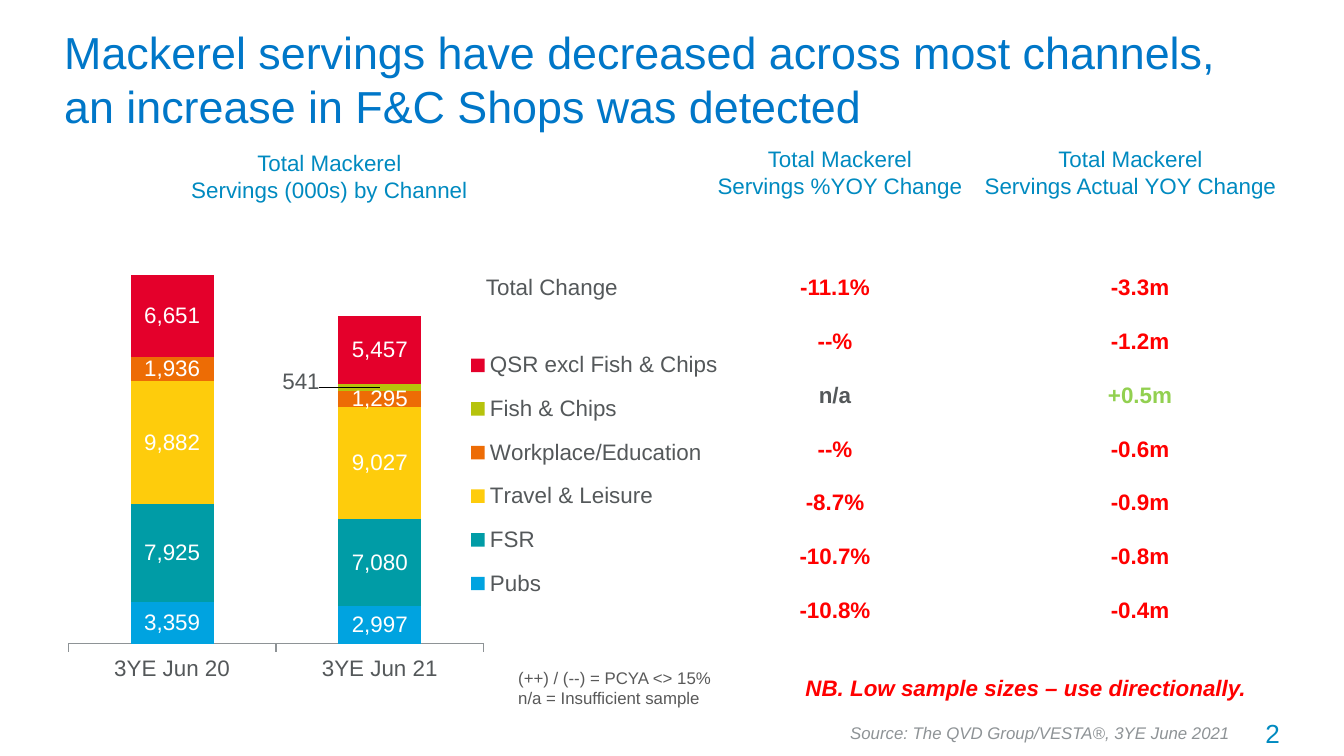
from dataclasses import dataclass

from pptx import Presentation
from pptx import util as u
from pptx.chart import data as cd
from pptx.dml.color import RGBColor
from pptx.enum import chart as ce, text as te
from pptx.oxml import parse_xml
from pptx.oxml.ns import nsdecls

CENTER, RIGHT = te.PP_ALIGN.CENTER, te.PP_ALIGN.RIGHT


@dataclass(frozen=True)
class Theme:
    font: str = "Arial"
    title: str = "0077C8"
    head: str = "008AC0"
    body: str = "54585A"
    note: str = "595959"
    source: str = "8E9396"
    down: str = "FF0000"
    up: str = "92D050"
    white: str = "FFFFFF"
    big: int = 24
    page: int = 14
    base: int = 12
    small: int = 9


T = Theme()

CATS = ["3YE Jun 20", "3YE Jun 21"]
SERIES = [
    ("Pubs", (3359, 2997), "00A3E0"),
    ("FSR", (7925, 7080), "009CA6"),
    ("Travel & Leisure", (9882, 9027), "FECC0C"),
    ("Workplace/Education", (1936, 1295), "ED6C05"),
    ("Fish & Chips", (0, 541), "B6C30C"),
    ("QSR excl Fish & Chips", (6651, 5457), "E4002B"),
]
RATES = ["-11.1%", "--%", "n/a", "--%", "-8.7%", "-10.7%", "-10.8%"]
DIFFS = ["-3.3m", "-1.2m", "+0.5m", "-0.6m", "-0.9m", "-0.8m", "-0.4m"]


def px(n):
    return u.Emu(round(n * 914400 / 134.4))


def rgb(code):
    return RGBColor.from_string(code)


def style(font, size, color, bold=False, italic=False):
    font.name, font.size = T.font, u.Pt(size)
    font.color.rgb = rgb(color)
    font.bold, font.italic = bold, italic


def put(slide, box, words, size, color, align=None, wrap=True, gap=0, **look):
    """Add a text box with one paragraph per line of words."""
    frame = slide.shapes.add_textbox(*map(px, box)).text_frame
    frame.word_wrap = wrap
    frame.text = words
    for para in frame.paragraphs:
        para.alignment = align
        para.space_after = u.Pt(gap)
        for run in para.runs:
            style(run.font, size, color, **look)
    return frame


def layout(x, y, w=None, h=None, inner=False):
    """Build a manual layout in fractions of the chart."""
    parts = ['<c:layoutTarget val="inner"/>'] if inner else []
    if w is not None:
        parts += ['<c:xMode val="edge"/>', '<c:yMode val="edge"/>']
    sizes = {"x": x, "y": y, "w": w, "h": h}
    parts += [f'<c:{k} val="{v}"/>' for k, v in sizes.items() if v is not None]
    return parse_xml(f'<c:layout {nsdecls("c")}><c:manualLayout>'
                     f'{"".join(parts)}</c:manualLayout></c:layout>')


def title(slide, box):
    frame = put(slide, box, "Mackerel servings have decreased across most channels, "
                "an increase in F&C Shops was detected", T.big, T.title)
    frame.vertical_anchor = te.MSO_ANCHOR.MIDDLE


def head(slide, box, words):
    put(slide, box, "Total Mackerel\n" + words, T.base, T.head, CENTER, wrap=False)


def label(series, color):
    labels = series.data_labels
    labels.show_value = True
    labels.number_format, labels.number_format_is_linked = "#,##0", False
    style(labels.font, T.base, color)


def stack(slide, box):
    data = cd.CategoryChartData()
    data.categories = CATS
    for name, vals, _ in SERIES:
        data.add_series(name, vals)
    chart = slide.shapes.add_chart(
        ce.XL_CHART_TYPE.COLUMN_STACKED, *map(px, box), data).chart
    style(chart.font, T.base, T.body)
    chart.has_title = False

    # Axes
    axis = chart.value_axis
    axis.visible = axis.has_major_gridlines = False
    axis.minimum_scale, axis.maximum_scale = 0, 35000
    chart.category_axis.format.line.color.rgb = rgb(T.source)
    chart.category_axis.major_tick_mark = ce.XL_TICK_MARK.OUTSIDE

    # Bars and their values
    plot = chart.plots[0]
    plot.gap_width, plot.overlap = 150, 100
    plot.vary_by_categories = False
    for series, (_, vals, color) in zip(plot.series, SERIES):
        series.format.fill.solid()
        series.format.fill.fore_color.rgb = rgb(color)
        if all(vals):
            label(series, T.white)
            continue
        # The thin bar has its value to the left
        series.data_labels.show_value = False
        style(series.points[1].data_label.font, T.base, T.body)
        chart.element.xpath(".//c:dLbl/c:idx")[0].addnext(layout(-0.11, -0.01))

    # Legend and plot area
    chart.has_legend = True
    chart.legend.position = ce.XL_LEGEND_POSITION.RIGHT
    chart.legend.include_in_layout = False
    style(chart.legend.font, T.base, T.body)
    for old in chart.element.xpath(".//c:plotArea/c:layout | .//c:legend/c:layout"):
        old.getparent().remove(old)
    chart.element.xpath(".//c:legendPos")[0].addnext(layout(0.57, 0.26, 0.37, 0.5))
    area = chart.element.xpath(".//c:plotArea")[0]
    area.insert(0, layout(0.02, 0.04, 0.58, 0.77, inner=True))


def column(slide, box, vals):
    frame = put(slide, box, "\n".join(vals), T.base, T.down, CENTER,
                gap=14.4, bold=True)
    tints = {"n": T.body, "+": T.up}
    for para in frame.paragraphs:
        para.runs[0].font.color.rgb = rgb(tints.get(para.text[0], T.down))


def notes(slide, box):
    x, y, w, h = box
    put(slide, (x, y, 223, 54), "(++) / (--) = PCYA <> 15%\nn/a = Insufficient sample",
        T.small, T.note, wrap=False)
    put(slide, (x + 261, y + 7, 520, 40), "NB. Low sample sizes – use directionally.",
        T.base, T.down, CENTER, bold=True, italic=True)
    put(slide, (x + 332, y + 55, 425, 34), "Source: The QVD Group/VESTA®, 3YE June 2021",
        T.small, T.source, wrap=False, italic=True)
    put(slide, (x + w - 108, y + 50, 108, 46), "2", T.page, T.head, RIGHT)


def main():
    prs = Presentation()
    prs.slide_width, prs.slide_height = px(1344), px(756)
    slide = prs.slides.add_slide(prs.slide_layouts[6])

    stack(slide, (54, 187, 716, 564))
    title(slide, (51, 31, 1232, 95))
    head(slide, (177, 143, 305, 67), "Servings (000s) by Channel")
    head(slide, (703, 139, 274, 67), "Servings %YOY Change")
    head(slide, (970, 139, 321, 67), "Servings Actual YOY Change")
    total = put(slide, (454, 267, 249, 40), "Total Change", T.base, T.body)
    total.margin_left = px(32)
    for x, vals in ((729, RATES), (1034, DIFFS)):
        column(slide, (x, 267, 212, 367), vals)
    notes(slide, (505, 661, 788, 96))
    prs.save("out.pptx")


if __name__ == "__main__":
    main()
